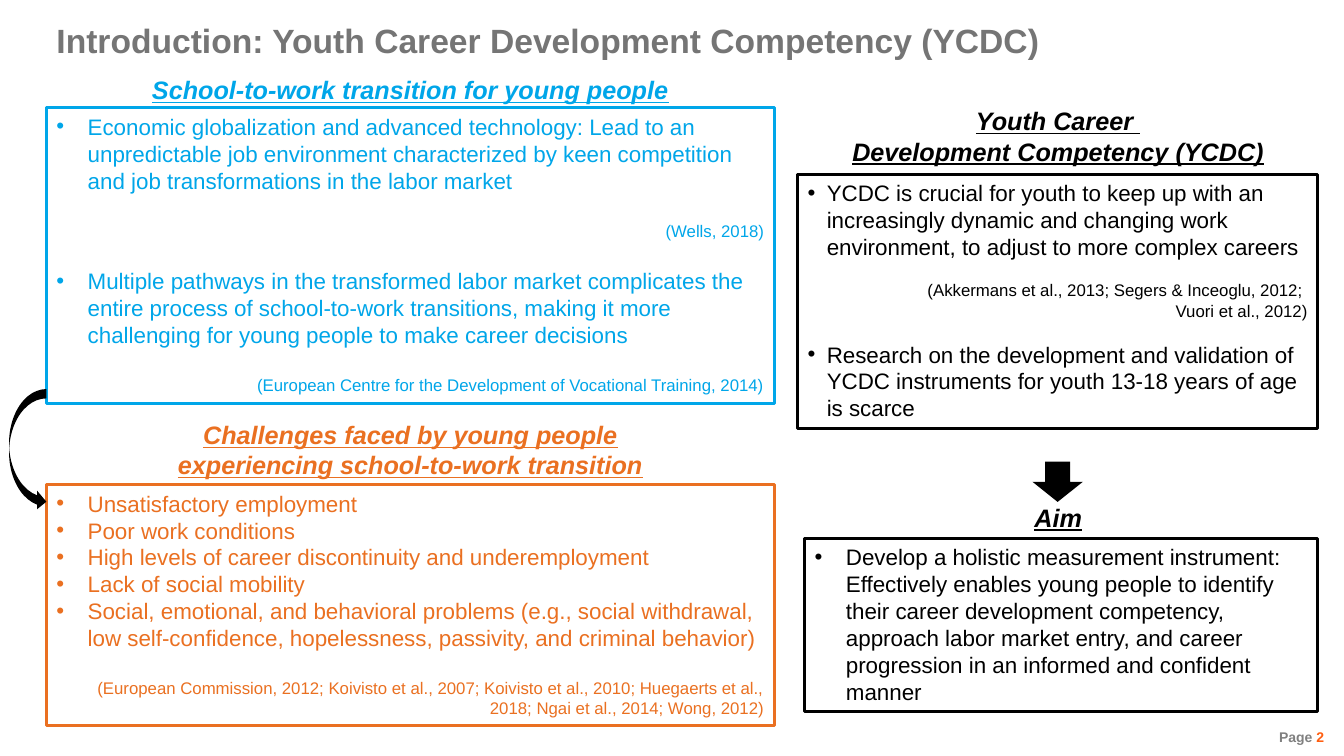
from lxml import etree
from pptx import Presentation
from pptx.dml.color import RGBColor
from pptx.enum.shapes import MSO_SHAPE as SHAPE
from pptx.enum.text import MSO_ANCHOR as ANCHOR, MSO_AUTO_SIZE as AUTOSIZE, PP_ALIGN as ALIGN
from pptx.oxml.ns import qn
from pptx.util import Inches, Pt

BLUE = RGBColor(0x00, 0xA6, 0xE9)
ORANGE = RGBColor(0xEA, 0x70, 0x21)
BLACK = RGBColor(0x00, 0x00, 0x00)
TITLE_GRAY = RGBColor(0x75, 0x75, 0x75)
PAGE_GRAY = RGBColor(0x80, 0x80, 0x80)
PAGE_ORANGE = RGBColor(0xFF, 0x5E, 0x10)

LEFT, LEFT_WIDTH = 0.46, 7.22
RIGHT_EDGE = 13.07
BODY, CITE, HEAD = 16, 12, 18
LEADING = 1.2  # line height as a share of the font size


def write(p, text, size, color, bold=False, italic=False, align=ALIGN.LEFT, gap=0):
    """Add one run to a paragraph; gap is the space before it in lines of its size."""
    p.alignment = align
    p.line_spacing = Pt(size * LEADING)
    p.space_before = Pt(gap)
    r = p.add_run()
    r.text = text
    r.font.name, r.font.size = "Arial", Pt(size)
    r.font.bold, r.font.italic, r.font.underline = bold, italic, italic
    r.font.color.rgb = color


def set_bullet(p, indent, color):
    """Give a paragraph a hanging bullet, or none when indent is 0."""
    pPr = p._p.get_or_add_pPr()
    pPr.set("marL", str(Inches(indent)))
    pPr.set("indent", str(-Inches(indent)))
    if not indent:
        etree.SubElement(pPr, qn("a:buNone"))
        return
    clr = etree.SubElement(pPr, qn("a:buClr"))
    etree.SubElement(clr, qn("a:srgbClr")).set("val", str(color))
    etree.SubElement(pPr, qn("a:buFont")).set("typeface", "Arial")
    etree.SubElement(pPr, qn("a:buChar")).set("char", "•")


prs = Presentation()
prs.slide_width, prs.slide_height = Inches(13.33), Inches(7.5)
s = prs.slides.add_slide(prs.slide_layouts.get_by_name("Comparison"))

# Title
title = s.shapes.title
title.left, title.top, title.width, title.height = map(Inches, (LEFT, 0.15, 10.08, 0.5))
tf = title.text_frame
tf.auto_size, tf.word_wrap, tf.vertical_anchor = AUTOSIZE.NONE, True, ANCHOR.TOP
write(tf.paragraphs[0], "Introduction: Youth Career Development Competency (YCDC)",
      24, TITLE_GRAY, bold=True)

# Framed lists: left, top, height, colour, line width, indent,
# then (kind, gap before in points, text)
blank_body, blank_cite = BODY * LEADING, CITE * LEADING
frames = [
    (LEFT, 1.07, 2.93, BLUE, 2, 0.31, [
        ("item", 0, "Economic globalization and advanced technology: Lead to an unpredictable job "
                    "environment characterized by keen competition and job transformations in the "
                    "labor market"),
        ("cite", blank_body, "(Wells, 2018)"),
        ("item", blank_body, "Multiple pathways in the transformed labor market complicates the "
                             "entire process of school-to-work transitions, making it more "
                             "challenging for young people to make career decisions"),
        ("cite", blank_body, "(European Centre for the Development of Vocational Training, 2014)"),
    ]),
    (LEFT, 4.81, 2.39, ORANGE, 2, 0.31, [
        ("item", 0, "Unsatisfactory employment"),
        ("item", 0, "Poor work conditions"),
        ("item", 0, "High levels of career discontinuity and underemployment"),
        ("item", 0, "Lack of social mobility"),
        ("item", 0, "Social, emotional, and behavioral problems (e.g., social withdrawal, low "
                    "self-confidence, hopelessness, passivity, and criminal behavior)"),
        ("cite", blank_body, "(European Commission, 2012; Koivisto et al., 2007; Koivisto et al., "
                             "2010; Huegaerts et al., 2018; Ngai et al., 2014; Wong, 2012)"),
    ]),
    (7.91, 1.73, 2.52, BLACK, 2.25, 0.19, [
        ("item", 0, "YCDC is crucial for youth to keep up with an increasingly dynamic and "
                    "changing work environment, to adjust to more complex careers"),
        ("cite", blank_cite, "(Akkermans et al., 2013; Segers & Inceoglu, 2012; "),
        ("cite", 0, "Vuori et al., 2012)"),
        ("item", blank_cite, "Research on the development and validation of YCDC instruments for "
                             "youth 13-18 years of age is scarce"),
    ]),
    (7.98, 5.34, 1.72, BLACK, 2.25, 0.31, [
        ("item", 0, "Develop a holistic measurement instrument: Effectively enables young people "
                    "to identify their career development competency, approach labor market "
                    "entry, and career progression in an informed and confident manner"),
    ]),
]
bodies = [sp for sp in s.placeholders if sp.placeholder_format.idx > 0]
for sp, (left, top, height, color, line_width, indent, entries) in zip(bodies, frames):
    width = LEFT_WIDTH if left == LEFT else RIGHT_EDGE - left
    sp.left, sp.top, sp.width, sp.height = map(Inches, (left, top, width, height))
    sp.line.color.rgb, sp.line.width = color, Pt(line_width)
    tf = sp.text_frame
    tf.auto_size, tf.word_wrap, tf.vertical_anchor = AUTOSIZE.NONE, True, ANCHOR.TOP
    for i, (kind, gap, text) in enumerate(entries):
        p = tf.add_paragraph() if i else tf.paragraphs[0]
        is_item = kind == "item"
        set_bullet(p, indent if is_item else 0, color)
        write(p, text, BODY if is_item else CITE, color,
              align=ALIGN.LEFT if is_item else ALIGN.RIGHT, gap=gap)

# Headings above the frames
headings = [
    (1.38, 0.69, 5.38, BLUE, ["School-to-work transition for young people"]),
    (0.83, 4.11, 6.48, ORANGE, ["Challenges faced by young people",
                                "experiencing school-to-work transition"]),
    (8.31, 1, 4.37, BLACK, ["Youth Career ", "Development Competency (YCDC)"]),
    (10.15, 4.93, 0.69, BLACK, ["Aim"]),
]
for left, top, width, color, lines in headings:
    height = 0.1 + 0.3 * len(lines)
    tf = s.shapes.add_textbox(*map(Inches, (left, top, width, height))).text_frame
    tf.word_wrap = True
    for i, text in enumerate(lines):
        p = tf.add_paragraph() if i else tf.paragraphs[0]
        write(p, text, HEAD, color, bold=True, italic=True, align=ALIGN.CENTER)

# Arrows
for preset, left, top, width, height in [
    (SHAPE.CURVED_RIGHT_ARROW, 0.09, 3.86, 0.37, 1.21),
    (SHAPE.DOWN_ARROW, 10.24, 4.58, 0.5, 0.4),
]:
    arrow = s.shapes.add_shape(preset, *map(Inches, (left, top, width, height)))
    arrow.shadow.inherit = False
    arrow.fill.solid()
    arrow.fill.fore_color.rgb = BLACK
    arrow.line.fill.background()

# Page number
tf = s.shapes.add_textbox(*map(Inches, (12.38, 7.18, 0.85, 0.27))).text_frame
tf.word_wrap = True
for text, color in [("Page ", PAGE_GRAY), ("2", PAGE_ORANGE)]:
    write(tf.paragraphs[0], text, 10, color, bold=True, align=ALIGN.RIGHT)

prs.save("out.pptx")
